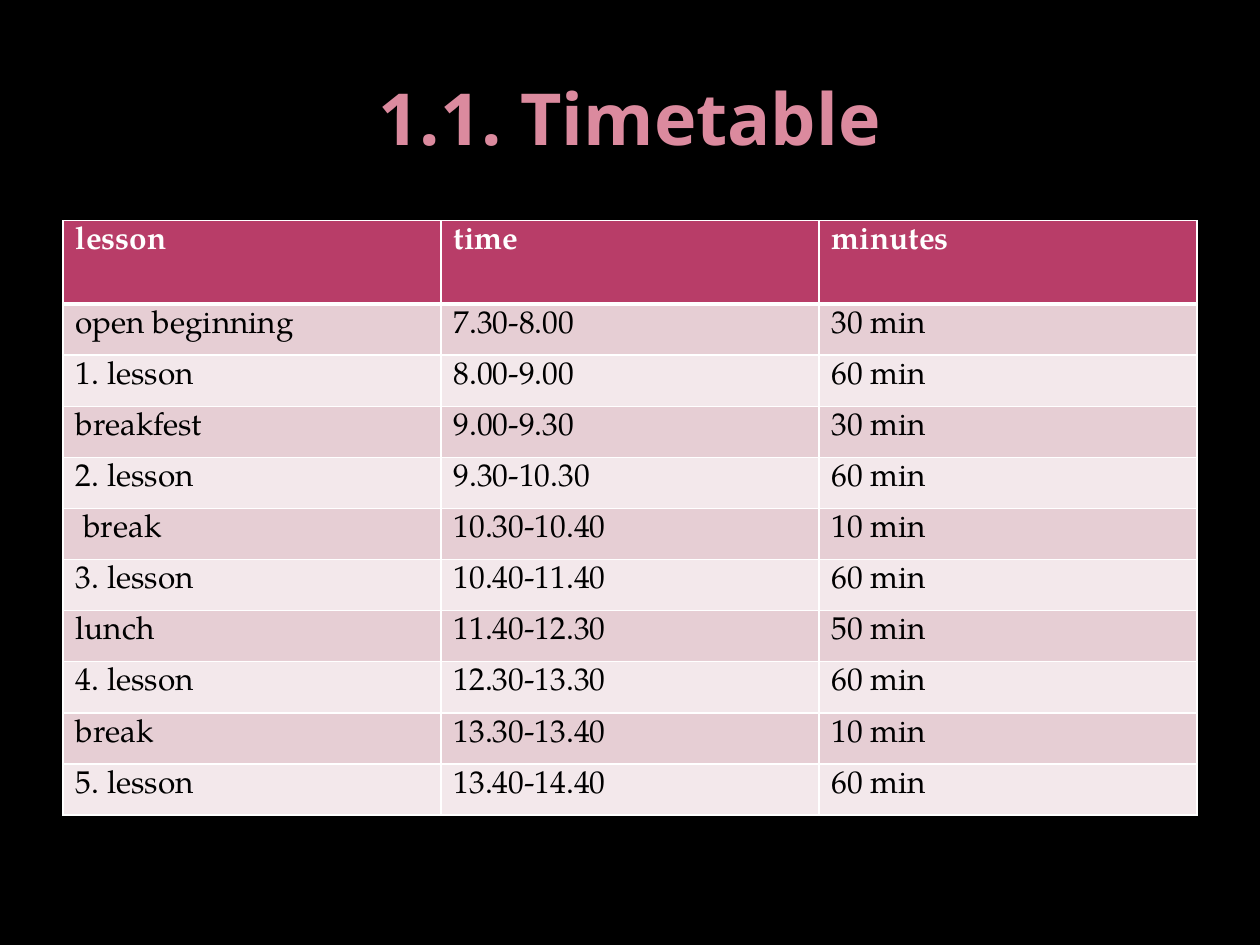
"""Build a slide with the school timetable."""
from pptx import Presentation
from pptx import util as u
from pptx.dml.color import RGBColor
from pptx.enum import text
from pptx.oxml import parse_xml
from pptx.oxml.ns import nsdecls


def paint(fill, color):
    fill.solid()
    fill.fore_color.rgb = RGBColor.from_string(color)


def add_border(cell, side, points):
    cell._tc.get_or_add_tcPr().append(parse_xml(
        f'<a:ln{side} {nsdecls("a")} w="{u.Pt(points)}"><a:solidFill>'
        f'<a:srgbClr val="FFFFFF"/></a:solidFill></a:ln{side}>'))


ROWS = [
    ("lesson", "time", "minutes"),
    ("open beginning", "7.30-8.00", "30 min"),
    ("1. lesson", "8.00-9.00", "60 min"),
    ("breakfest", "9.00-9.30", "30 min"),
    ("2. lesson", "9.30-10.30", "60 min"),
    (" break", "10.30-10.40", "10 min"),
    ("3. lesson", "10.40-11.40", "60 min"),
    ("lunch", "11.40-12.30", "50 min"),
    ("4. lesson", "12.30-13.30", "60 min"),
    ("break", "13.30-13.40", "10 min"),
    ("5. lesson", "13.40-14.40", "60 min"),
]

deck = Presentation()
deck.slide_width, deck.slide_height = u.Cm(25.4), u.Cm(19.05)
page = deck.slides.add_slide(deck.slide_layouts[5])
paint(page.background.fill, "000000")

title = page.shapes.title
title.left, title.top = u.Cm(1.27), u.Cm(0.76)
title.width, title.height = u.Cm(22.86), u.Cm(3.18)
title.text_frame.text = "1.1. Timetable"
title.text_frame.vertical_anchor = text.MSO_ANCHOR.MIDDLE
para = title.text_frame.paragraphs[0]
para.alignment = text.PP_ALIGN.CENTER
para.font.name, para.font.size, para.font.bold = "Noto Sans", u.Pt(41), True
paint(para.font.fill, "DB8A9E")

timetable = page.shapes.add_table(
    len(ROWS), 3, u.Cm(1.27), u.Cm(4.45), u.Cm(22.86), u.Cm(11.98)).table
for column in timetable.columns:
    column.width = u.Cm(7.62)

for row_index, values in enumerate(ROWS):
    header = row_index == 0
    timetable.rows[row_index].height = u.Cm(1.68 if header else 1.03)
    band = "B83D68" if header else ("F3E8EB", "E6CED4")[row_index % 2]
    for column_index, value in enumerate(values):
        cell = timetable.cell(row_index, column_index)
        for side in "LRTB":
            thick = (header and side == "B") or (row_index == 1 and side == "T")
            add_border(cell, side, 3 if thick else 1)
        paint(cell.fill, band)
        cell.text = value
        font = cell.text_frame.paragraphs[0].font
        font.name, font.size, font.bold = "TeX Gyre Pagella", u.Pt(18), header
        paint(font.fill, "FFFFFF" if header else "000000")

deck.save("out.pptx")
